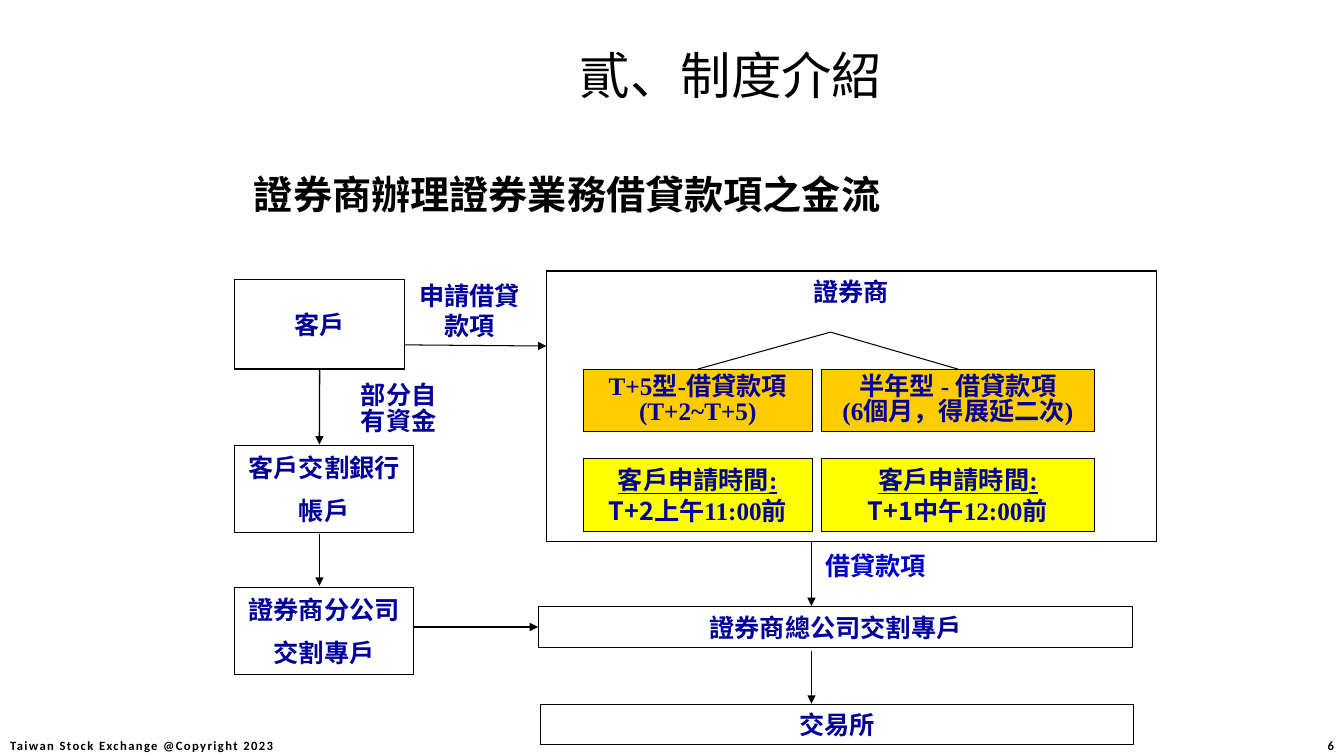
from dataclasses import dataclass

from lxml.etree import SubElement
from pptx import Presentation
from pptx.dml.color import RGBColor
from pptx.enum.shapes import MSO_CONNECTOR, MSO_SHAPE
from pptx.enum.text import MSO_ANCHOR, PP_ALIGN
from pptx.oxml.ns import qn
from pptx.util import Cm, Pt


@dataclass(frozen=True)
class Theme:
    serif: str = "Times New Roman"
    sans: str = "Noto Sans CJK SC"
    footer: str = "Calibri"
    black: str = "000000"
    navy: str = "000099"
    blue: str = "0000CC"
    loan_fill: str = "FFCC00"
    time_fill: str = "FFFF00"
    title_size: int = 36
    heading_size: int = 28
    label_size: int = 18
    footer_size: int = 9
    thin: float = 0.75
    arrow: float = 1


THEME = Theme()
SANS = {"font": THEME.sans}
UNDERLINE = {"underline": True}
FOOTER = {"font": THEME.footer, "size": THEME.footer_size, "color": THEME.black, "tracking": 1}
TOP, LEFT, BOTTOM = 0, 1, 2

# Boxes: place (left, top, width, height in cm), paragraphs of (text, run style), options
T5_COLUMN, HALF_YEAR_COLUMN = (14.7, 5.77), (20.7, 6.88)
LOAN_ROW, TIME_ROW = (9.3, 1.57), (11.56, 1.83)


def cell(column, row):
    return column[0], row[0], column[1], row[1]


STACKED = {"before": 9}
LOAN = {"fill": THEME.loan_fill, "spacing": 0.85}
TIME = {"fill": THEME.time_fill}
BOXES = {
    "broker": ((13.77, 6.83, 15.37, 6.81), [[("證券商", {})]], {"anchor": MSO_ANCHOR.TOP}),
    "t5_loan": (cell(T5_COLUMN, LOAN_ROW),
                [[("T+5型-借貸款項", {})], [("(T+2~T+5)", {})]], LOAN),
    "half_year_loan": (cell(HALF_YEAR_COLUMN, LOAN_ROW),
                       [[("半年型 - 借貸款項", {})], [("(6個月，得展延二次)", {})]], LOAN),
    "t5_time": (cell(T5_COLUMN, TIME_ROW),
                [[("客戶申請時間:", UNDERLINE)], [("T+2上", SANS), ("午11:00前", {})]], TIME),
    "half_year_time": (cell(HALF_YEAR_COLUMN, TIME_ROW),
                       [[("客戶申請時間:", UNDERLINE)], [("T+1中", SANS), ("午12:00前", {})]], TIME),
    "customer": ((5.92, 7.04, 4.27, 2.26), [[("客戶", {})]], {}),
    "bank": ((5.92, 11.23, 4.5, 2.18), [[("客戶交割銀行", {})], [("帳戶", {})]], STACKED),
    "branch": ((5.92, 14.81, 4.5, 2.18), [[("證券商分公司", {})], [("交割專戶", {})]], STACKED),
    "head_office": ((13.56, 15.29, 14.99, 1.02), [[("證券商總公司交割專戶", {})]], {}),
    "exchange": ((13.61, 17.75, 14.96, 1.02), [[("交易所", {})]], {}),
}

LABELS = [
    ((4.24, 0.71, 28.37, 2.34),
     [[("貳、制度介紹", {"size": THEME.title_size, "color": THEME.black, "bold": False})]], {}),
    ((6.4, 4.19, 18.5, 1.4),
     [[("證券商辦理證券業務借貸款項之金流", {"size": THEME.heading_size, "color": THEME.black})]],
     {"align": PP_ALIGN.LEFT}),
    ((5.59, 7.06, 12.5, 1.6), [[("申請借貸", {})], [("款項", {})]], {"anchor": MSO_ANCHOR.TOP}),
    ((3.89, 9.96, 12.32, 1.2), [[("部分自", {})], [("有資金", {})]],
     {"anchor": MSO_ANCHOR.TOP, "spacing": Pt(10), "before": 9}),
    ((20.8, 13.71, 4, 1.1), [[("借貸款項", {"font": THEME.sans, "color": THEME.blue})]],
     {"align": PP_ALIGN.LEFT}),
    ((0, 18.54, 7.14, 0.51), [[("Taiwan Stock Exchange @Copyright 2023", FOOTER)]], {}),
    ((32.36, 18.54, 1.26, 0.51), [[("6", FOOTER)]], {"align": PP_ALIGN.RIGHT}),
]

# Lines: start, end, line width, arrowhead, joined start, joined end
FORK = (20.93, 8.37)
FLOW_X = 20.45
LINES = [
    (FORK, (17.59, 9.3), THEME.thin, False, None, ("t5_loan", TOP)),
    (FORK, (24.14, 9.3), THEME.thin, False, None, ("half_year_loan", TOP)),
    ((10.19, 8.69), (13.77, 8.72), THEME.thin, True, None, None),
    ((8.05, 9.3), (8.05, 11.2), THEME.arrow, True, ("customer", BOTTOM), None),
    ((8.05, 13.46), (8.05, 14.76), THEME.arrow, True, None, None),
    ((10.42, 15.8), (13.56, 15.8), THEME.arrow, True, None, ("head_office", LEFT)),
    ((FLOW_X, 13.64), (FLOW_X, 15.27), THEME.arrow, True, None, None),
    ((FLOW_X, 16.41), (FLOW_X, 17.73), THEME.arrow, True, None, None),
]


def rgb(color):
    return RGBColor.from_string(color)


def add_text(frame, paragraphs, align=PP_ALIGN.CENTER, anchor=MSO_ANCHOR.MIDDLE,
             spacing=None, before=0):
    frame.word_wrap = True
    frame.vertical_anchor = anchor
    for index, runs in enumerate(paragraphs):
        paragraph = frame.add_paragraph() if index else frame.paragraphs[0]
        paragraph.alignment = align
        paragraph.line_spacing = spacing
        if index and before:
            paragraph.space_before = Pt(before)
        for text, style in runs:
            run = paragraph.add_run()
            run.text = text
            run.font.name = style.get("font", THEME.serif)
            run.font.size = Pt(style.get("size", THEME.label_size))
            run.font.bold = style.get("bold", True)
            run.font.underline = style.get("underline", False)
            run.font.color.rgb = rgb(style.get("color", THEME.navy))
            if "tracking" in style:
                run.font._element.set("spc", str(style["tracking"] * 100))


def add_box(slide, place, paragraphs, fill=None, **layout):
    box = slide.shapes.add_shape(MSO_SHAPE.RECTANGLE, *map(Cm, place))
    box.shadow.inherit = False
    if fill:
        box.fill.solid()
        box.fill.fore_color.rgb = rgb(fill)
    else:
        box.fill.background()
    box.line.color.rgb = rgb(THEME.black)
    box.line.width = Pt(THEME.thin)
    frame = box.text_frame
    frame.margin_left = frame.margin_right = Cm(0.1)
    add_text(frame, paragraphs, **layout)
    return box


def add_label(slide, place, paragraphs, layout):
    frame = slide.shapes.add_textbox(*map(Cm, place)).text_frame
    frame.margin_left = frame.margin_right = frame.margin_top = frame.margin_bottom = 0
    add_text(frame, paragraphs, **layout)


def add_line(slide, boxes, start, end, width, arrow, joined_start, joined_end):
    line = slide.shapes.add_connector(MSO_CONNECTOR.STRAIGHT, *map(Cm, start + end))
    if joined_start:
        line.begin_connect(boxes[joined_start[0]], joined_start[1])
    if joined_end:
        line.end_connect(boxes[joined_end[0]], joined_end[1])
    line.line.color.rgb = rgb(THEME.black)
    line.line.width = Pt(width)
    if arrow:
        SubElement(line.line._get_or_add_ln(), qn("a:tailEnd"), type="triangle")
    SubElement(line._element.spPr, qn("a:effectLst"))


def main():
    deck = Presentation()
    deck.slide_width, deck.slide_height = Cm(33.87), Cm(19.05)
    slide = deck.slides.add_slide(deck.slide_layouts[6])
    boxes = {name: add_box(slide, place, paragraphs, **options)
             for name, (place, paragraphs, options) in BOXES.items()}
    for line in LINES:
        add_line(slide, boxes, *line)
    for label in LABELS:
        add_label(slide, *label)
    deck.save("out.pptx")


if __name__ == "__main__":
    main()
